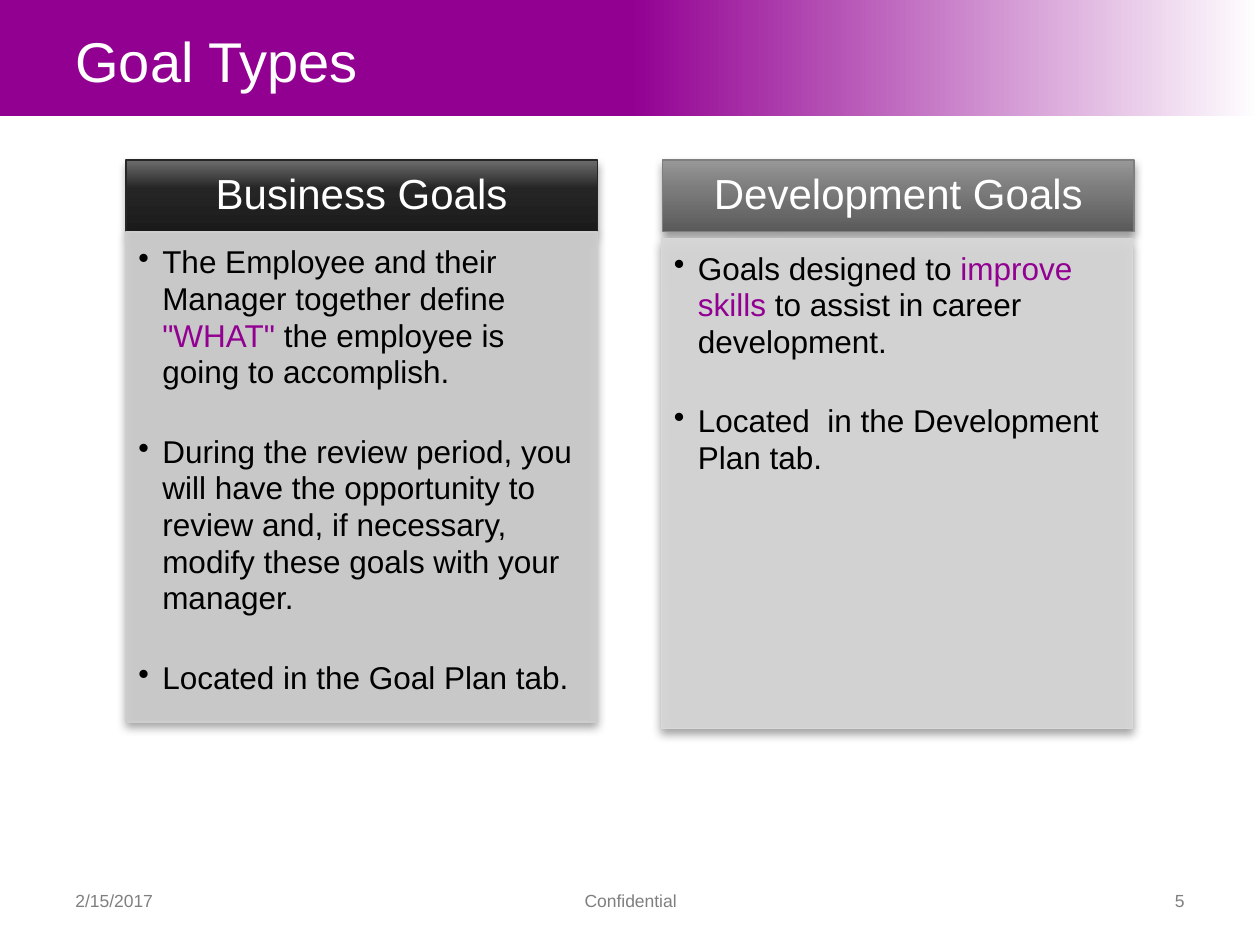
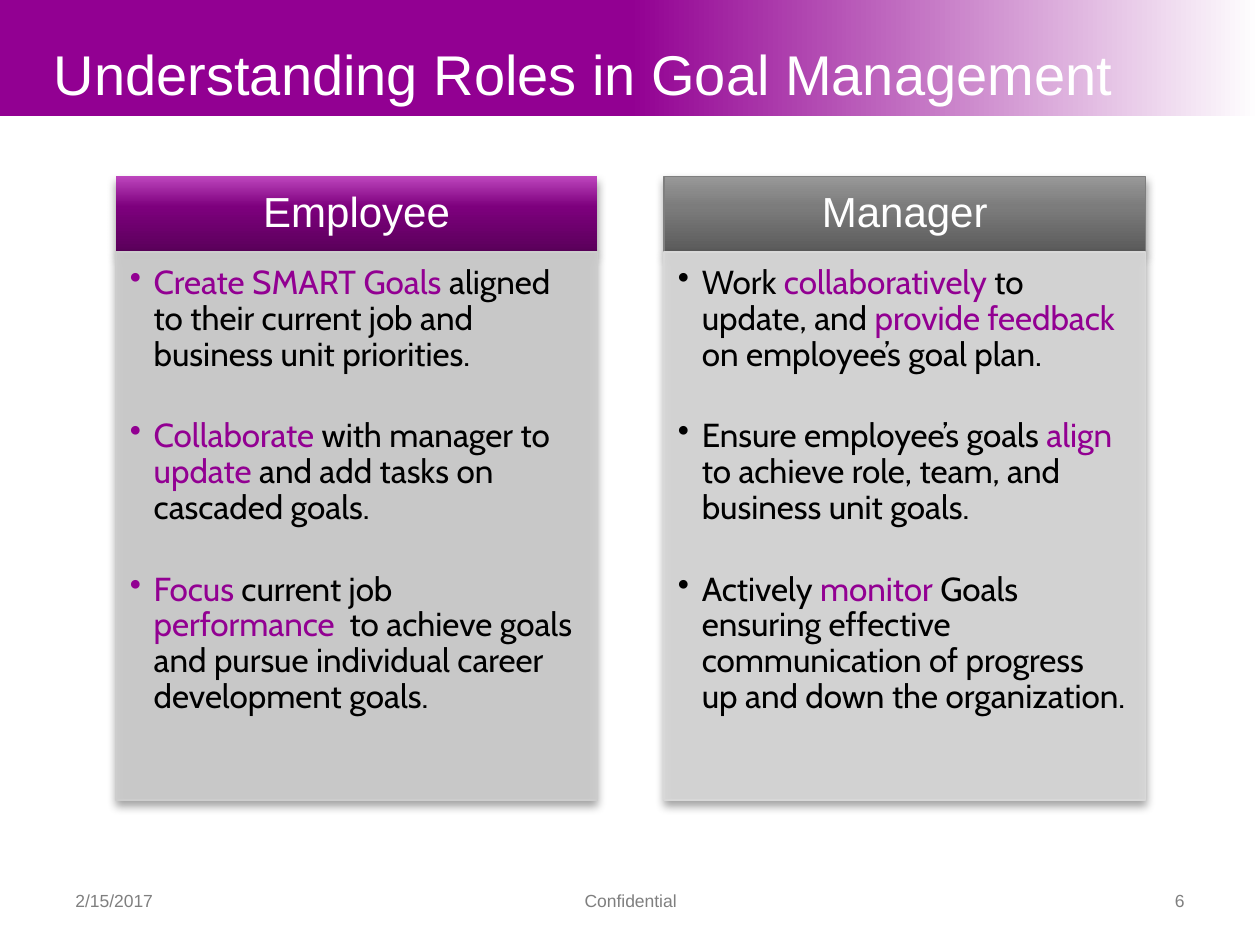
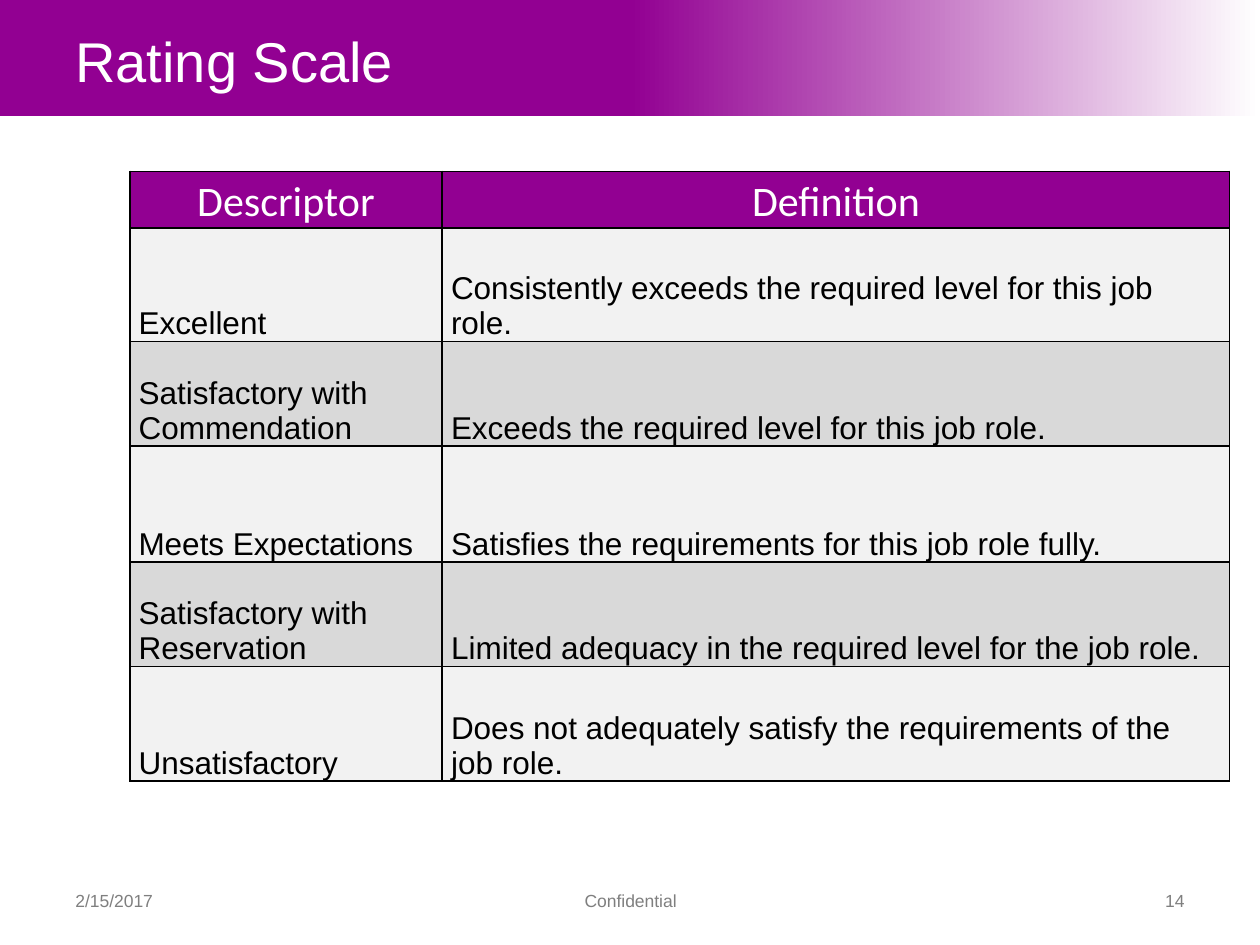
from copy import deepcopy
from dataclasses import dataclass

from lxml import etree
from pptx import Presentation
from pptx.dml.color import RGBColor
from pptx.enum.shapes import MSO_SHAPE
from pptx.enum.text import MSO_ANCHOR, PP_ALIGN
from pptx.oxml.ns import qn
from pptx.util import Inches, Pt

RECT = MSO_SHAPE.RECTANGLE
TOP, MIDDLE, BOTTOM = MSO_ANCHOR.TOP, MSO_ANCHOR.MIDDLE, MSO_ANCHOR.BOTTOM
LEFT, CENTER, RIGHT = PP_ALIGN.LEFT, PP_ALIGN.CENTER, PP_ALIGN.RIGHT


@dataclass(frozen=True)
class Theme:
    accent: str = "920092"
    white: str = "FFFFFF"
    text: str = "000000"
    muted: str = "7F7F7F"
    rows: tuple = ("F2F2F2", "D9D9D9")
    font: str = "Arial"
    header_font: str = "Calibri"
    title_size: int = 32
    heading_size: int = 24
    table_size: int = 18
    footer_size: int = 10


@dataclass(frozen=True)
class PanelStyle:
    """Heading gradient from bottom to top, heading outline and body fill."""
    gradient: tuple
    outline: str
    body: str


@dataclass(frozen=True)
class BodyType:
    font: str
    size: int
    line_spacing: float
    gap: float
    insets: tuple


T = Theme()
GRAY_GRADIENT = ((0, "5A5A5A"), (60, "7C7C7C"), (100, "989898"))
BLACK = PanelStyle(((0, "1B1B1B"), (60, "252525"), (100, "6D6D6D")), "262626", "CDCDCD")
PURPLE = PanelStyle(((0, "5A005A"), (60, "7D007D"), (100, "BD45BD")), None, "CDCDCD")
GRAY = PanelStyle(GRAY_GRADIENT, "7F7F7F", "D8D8D8")
GOAL_TYPE = BodyType(T.font, 18, 0.97, 24.5, (0.1, 0.1, 0.14, 0.16))
ROLE_TYPE = BodyType("Cabin", 19, 0.9, 26, (0.11, 0.11, 0.15, 0.17))

# Words between asterisks take the accent colour.
BUSINESS = [
    'The Employee and their Manager together define *"WHAT" *the employee is going to accomplish.',
    "During the review period, you will have the opportunity to review and, if necessary, "
    "modify these goals with your manager.",
    "Located in the Goal Plan tab.",
]
DEVELOPMENT = [
    "Goals designed to *improve skills* to assist in career development.",
    "Located  in the Development Plan tab.",
]
EMPLOYEE = [
    "*Create SMART Goals *aligned to their current job and business unit priorities.",
    "*Collaborate* with manager to *update* and add tasks on cascaded goals.",
    "*Focus* current job *performance*  to achieve goals and pursue individual career "
    "development goals.",
]
MANAGER = [
    "Work *collaboratively* to update, and *provide feedback* on employee’s goal plan.",
    "Ensure employee’s goals *align* to achieve role, team, and business unit goals.",
    "Actively *monitor* Goals ensuring effective communication of progress up and down "
    "the organization.",
]
RATINGS = [
    ("Descriptor", "Definition"),
    ("Excellent", "Consistently exceeds the required level for this job role."),
    ("Satisfactory with Commendation", "Exceeds the required level for this job role."),
    ("Meets Expectations", "Satisfies the requirements for this job role fully."),
    ("Satisfactory with Reservation", "Limited adequacy in the required level for the job role."),
    ("Unsatisfactory", "Does not adequately satisfy the requirements of the job role."),
]


def rgb(color):
    return RGBColor.from_string(color)


def add_run(p, text, size, color, font=T.font):
    r = p.add_run()
    r.text = text
    r.font.size, r.font.name = Pt(size), font
    r.font.color.rgb = rgb(color)


def set_frame(tf, anchor, insets=(0.1, 0.05, 0.1, 0.05)):
    tf.word_wrap, tf.vertical_anchor = True, anchor
    tf.margin_left, tf.margin_top, tf.margin_right, tf.margin_bottom = map(Inches, insets)


def add_label(s, box, text, size, color, align=LEFT):
    tf = s.shapes.add_textbox(*map(Inches, box)).text_frame
    set_frame(tf, MIDDLE)
    tf.paragraphs[0].alignment = align
    add_run(tf.paragraphs[0], text, size, color)


def add_rect(s, box, outline=None):
    sp = s.shapes.add_shape(RECT, *map(Inches, box))
    sp.shadow.inherit = False
    if outline:
        sp.line.color.rgb, sp.line.width = rgb(outline), Pt(0.75)
    else:
        sp.line.fill.background()
    return sp


def fill_gradient(sp, stops, angle):
    sp.fill.gradient()
    sp.fill.gradient_angle = angle
    stop_list = sp._element.spPr.find(qn("a:gradFill")).find(qn("a:gsLst"))
    while len(stop_list) < len(stops):
        stop_list.append(deepcopy(stop_list[0]))
    for stop, (position, color) in zip(sp.fill.gradient_stops, stops):
        stop.position, stop.color.rgb = position / 100, rgb(color)


def add_color(parent, color, alpha=None):
    clr = etree.SubElement(parent, qn("a:srgbClr"), val=color)
    if alpha is not None:
        etree.SubElement(clr, qn("a:alpha"), val=str(alpha * 1000))


def add_shadow(sp):
    effects = sp._element.spPr.find(qn("a:effectLst"))
    shadow = etree.SubElement(effects, qn("a:outerShdw"), blurRad=str(Pt(5.2)),
                              dist=str(Pt(3)), dir="5400000", rotWithShape="0")
    add_color(shadow, "000000", 40)


def add_heading(s, box, text, style):
    sp = add_rect(s, box, style.outline)
    fill_gradient(sp, style.gradient, 90)
    add_shadow(sp)
    set_frame(sp.text_frame, MIDDLE, (0.19, 0.11, 0.19, 0.11))
    p = sp.text_frame.paragraphs[0]
    p.alignment, p.line_spacing = CENTER, 0.9
    add_run(p, text, T.heading_size, T.white)


def add_bullet(p, text, body_type):
    pPr = p._p.get_or_add_pPr()
    pPr.set("marL", str(Inches(0.19)))
    pPr.set("indent", str(-Inches(0.19)))
    etree.SubElement(pPr, qn("a:buChar"), char="•")
    p.alignment, p.line_spacing, p.space_after = LEFT, body_type.line_spacing, Pt(body_type.gap)
    for i, part in enumerate(text.split("*")):
        if part:
            color = T.accent if i % 2 else T.text
            add_run(p, part, body_type.size, color, body_type.font)


def add_body(s, box, bullets, style, body_type):
    sp = add_rect(s, box, style.body)
    sp.fill.solid()
    sp.fill.fore_color.rgb = rgb(style.body)
    color = sp._element.spPr.find(qn("a:solidFill"))[0]
    etree.SubElement(color, qn("a:alpha"), val="90000")
    add_shadow(sp)
    tf = sp.text_frame
    set_frame(tf, TOP, body_type.insets)
    for i, text in enumerate(bullets):
        add_bullet(tf.add_paragraph() if i else tf.paragraphs[0], text, body_type)


def add_panel(s, box, heading_height, heading, bullets, style, body_type, body_shift=(0, 0)):
    """Heading bar with a bulleted body below it; body_shift moves the body."""
    x, y, w, h = box
    dx, dy = body_shift
    add_heading(s, (x, y, w, heading_height), heading, style)
    body_box = (x + dx, y + heading_height + dy, w, h - heading_height)
    add_body(s, body_box, bullets, style, body_type)


def add_borders(cell):
    tcPr = cell._tc.get_or_add_tcPr()
    for i, side in enumerate(("lnL", "lnR", "lnT", "lnB")):
        line = etree.Element(qn(f"a:{side}"), w=str(Pt(1)))
        add_color(etree.SubElement(line, qn("a:solidFill")), T.text)
        tcPr.insert(i, line)


def add_rating_table(s, left, top, widths, heights):
    box = (left, top, sum(widths), sum(heights))
    table = s.shapes.add_table(len(RATINGS), len(widths), *map(Inches, box)).table
    for column, width in zip(table.columns, widths):
        column.width = Inches(width)
    for i, (row, height, texts) in enumerate(zip(table.rows, heights, RATINGS)):
        row.height = Inches(height)
        for cell, text in zip(row.cells, texts):
            cell.fill.solid()
            cell.fill.fore_color.rgb = rgb(T.rows[(i - 1) % 2] if i else T.accent)
            add_borders(cell)
            cell.vertical_anchor = BOTTOM
            cell.margin_left = cell.margin_right = Inches(0.07)
            cell.margin_top = cell.margin_bottom = 0
            p = cell.text_frame.paragraphs[0]
            if i:
                add_run(p, text, T.table_size, T.text)
            else:
                p.alignment = CENTER
                add_run(p, text, T.heading_size, T.white, T.header_font)


def add_page(prs, title, number, title_box=(0.5, 0, 9, 0.95)):
    """Blank slide with the title band and footer."""
    s = prs.slides.add_slide(prs.slide_layouts[6])
    band = add_rect(s, (0, 0, 10, 0.92))
    fill_gradient(band, ((1, T.accent), (50, T.accent), (100, T.white)), 0)
    add_label(s, title_box, title, T.title_size, T.white)
    for x, w, text, align in ((0.5, 2.33, "2/15/2017", LEFT),
                              (3.42, 3.17, "Confidential", CENTER),
                              (7.17, 2.33, str(number), RIGHT)):
        add_label(s, (x, 6.95, w, 0.4), text, T.footer_size, T.muted, align)
    return s


def build_goal_types(prs):
    s = add_page(prs, "Goal Types", 5)
    add_panel(s, (1, 1.27, 3.74, 4.46), 0.57, "Business Goals", BUSINESS, BLACK, GOAL_TYPE)
    add_panel(s, (5.26, 1.27, 3.74, 4.46), 0.57, "Development Goals", DEVELOPMENT, GRAY,
              GOAL_TYPE, body_shift=(-0.01, 0.05))


def build_roles(prs):
    s = add_page(prs, "Understanding Roles in Goal Management", 6, (0.33, 0.08, 9.17, 1))
    for x, heading, bullets, style in ((0.92, "Employee", EMPLOYEE, PURPLE),
                                       (5.27, "Manager", MANAGER, GRAY)):
        add_panel(s, (x, 1.4, 3.82, 4.95), 0.6, heading, bullets, style, ROLE_TYPE)


def build_rating_scale(prs):
    s = add_page(prs, "Rating Scale", 14)
    add_rating_table(s, 1.03, 1.36, (2.48, 6.25), (0.45, 0.9, 0.83, 0.92, 0.83, 0.91))


def main():
    prs = Presentation()
    prs.slide_width, prs.slide_height = Inches(10), Inches(7.5)
    build_goal_types(prs)
    build_roles(prs)
    build_rating_scale(prs)
    prs.save("out.pptx")


if __name__ == "__main__":
    main()
